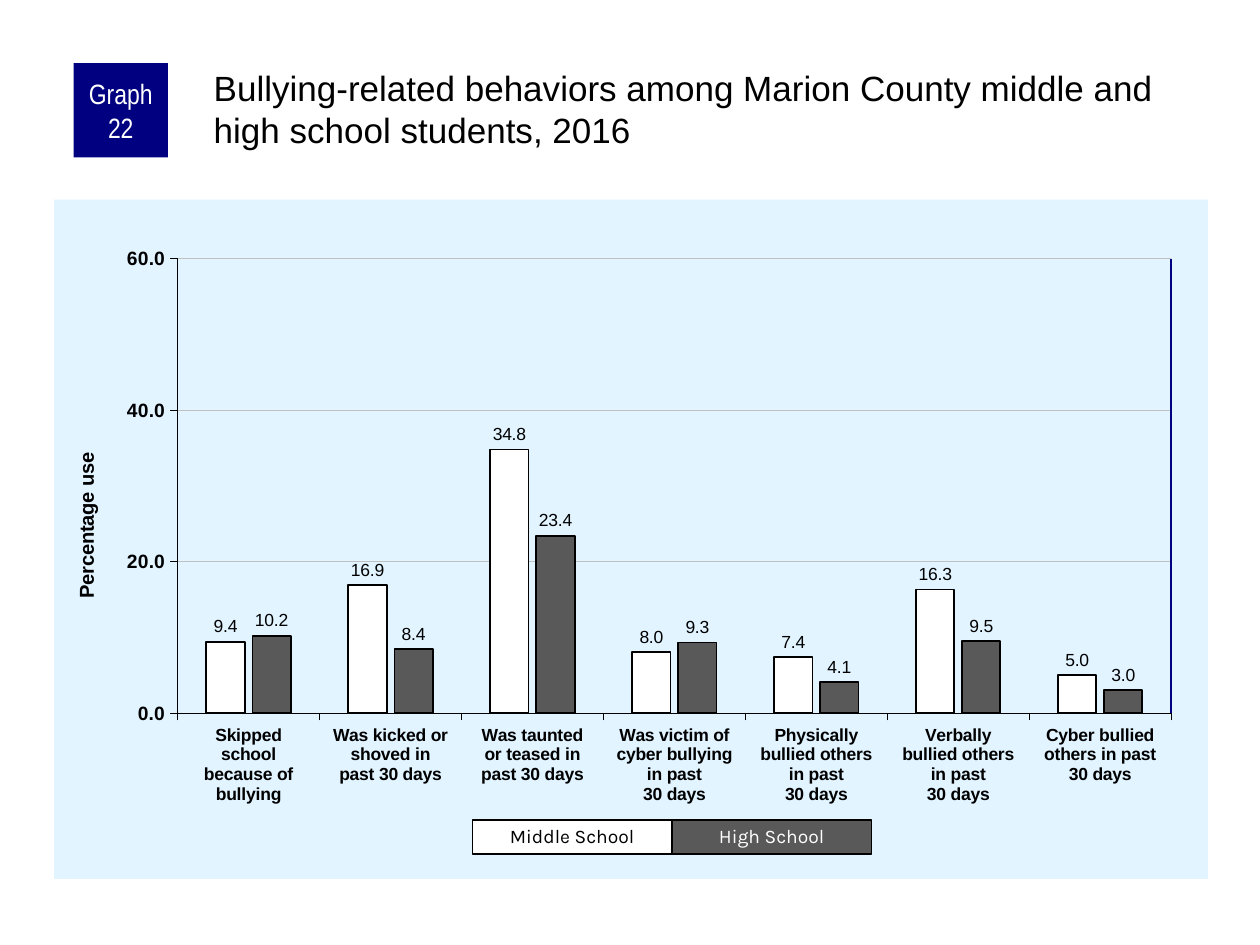
from dataclasses import dataclass

from lxml import etree
from pptx import Presentation
from pptx import util as u
from pptx.chart import data as chart_data
from pptx.dml.color import RGBColor
from pptx.enum import chart as charts, shapes, text
from pptx.oxml import parse_xml
from pptx.oxml import ns

COLUMNS, ROWS = 120, 90
PAGE_WIDTH, PAGE_HEIGHT = u.Inches(10), u.Inches(7.5)


@dataclass(frozen=True)
class Theme:
    black: str = "000000"
    white: str = "FFFFFF"
    navy: str = "000080"
    gray: str = "595959"
    grid: str = "C0C0C0"
    panel: str = "E1F4FF"
    body: str = "Arial"
    narrow: str = "Arial Narrow"
    legend: str = "Karla"
    title_size: float = 20
    badge_size: float = 16
    axis_title_size: float = 11.5
    axis_size: float = 11
    label_size: float = 10


@dataclass(frozen=True)
class Box:
    column: float
    row: float
    columns: float
    rows: float

    def emu(self):
        across, down = PAGE_WIDTH / COLUMNS, PAGE_HEIGHT / ROWS
        return [round(value) for value in (self.column * across, self.row * down,
                                           self.columns * across, self.rows * down)]

    def split(self, count):
        width = self.columns / count
        return [Box(self.column + index * width, self.row, width, self.rows)
                for index in range(count)]


THEME = Theme()
PLOT = {"x": 0.107, "y": 0.087, "w": 0.861, "h": 0.669}
SERIES = [
    ("Middle School", THEME.white, THEME.black, (9.4, 16.9, 34.8, 8, 7.4, 16.3, 5)),
    ("High School", THEME.gray, THEME.white, (10.2, 8.4, 23.4, 9.3, 4.1, 9.5, 3)),
]
CATEGORIES = [
    "Skipped\nschool\nbecause of\nbullying",
    "Was kicked or\nshoved in\npast 30 days",
    "Was taunted\nor teased in\npast 30 days",
    "Was victim of\ncyber bullying\nin past\n30 days",
    "Physically\nbullied others\nin past\n30 days",
    "Verbally\nbullied others\nin past\n30 days",
    "Cyber bullied\nothers in past\n30 days",
]


def set_font(font, size, color=THEME.black, name=THEME.body, bold=False):
    font.size, font.name, font.bold = u.Pt(size), name, bold
    font.color.rgb = RGBColor.from_string(color)


def set_line(line, color, width):
    line.color.rgb = RGBColor.from_string(color)
    line.width = u.Pt(width)


def set_fill(fill, color):
    fill.solid()
    fill.fore_color.rgb = RGBColor.from_string(color)


def write(frame, words, *, size, color=THEME.black, name=THEME.body, align=None,
          anchor=text.MSO_ANCHOR.TOP, insets=(0.1, 0.05, 0.1, 0.05), spacing=None):
    frame.word_wrap = True
    frame.vertical_anchor = anchor
    (frame.margin_left, frame.margin_top,
     frame.margin_right, frame.margin_bottom) = map(u.Inches, insets)
    para = frame.paragraphs[0]
    para.alignment, para.line_spacing = align, spacing
    span = para.add_run()
    span.text = words
    set_font(span.font, size, color, name)


def add_block(page, box, fill, outline=None):
    block = page.shapes.add_shape(shapes.MSO_SHAPE.RECTANGLE, *box.emu())
    block.shadow.inherit = False
    set_fill(block.fill, fill)
    if outline:
        set_line(block.line, outline, 0.75)
    else:
        block.line.fill.background()
    return block


def add_heading(page, badge_box, title_box):
    badge = add_block(page, badge_box, THEME.navy)
    write(badge.text_frame, "Graph 22", size=THEME.badge_size, color=THEME.white,
          name=THEME.narrow, align=text.PP_ALIGN.CENTER,
          anchor=text.MSO_ANCHOR.MIDDLE, insets=(0.05, 0, 0.05, 0))
    title = page.shapes.add_textbox(*title_box.emu())
    write(title.text_frame,
          "Bullying-related behaviors among Marion County middle and high school students, 2016",
          size=THEME.title_size, insets=(0.03, 0.03, 0, 0))


def set_chart_area(chart):
    area = parse_xml(
        f'<c:spPr {ns.nsdecls("c", "a")}><a:solidFill><a:srgbClr val="{THEME.panel}"/>'
        '</a:solidFill><a:ln><a:noFill/></a:ln></c:spPr>')
    chart.element.find(ns.qn("c:chart")).addnext(area)
    plot_area = chart.element.find(".//" + ns.qn("c:plotArea"))
    for old in plot_area.findall(ns.qn("c:layout")):
        plot_area.remove(old)
    layout = etree.Element(ns.qn("c:layout"))
    manual = etree.SubElement(layout, ns.qn("c:manualLayout"))
    settings = {"layoutTarget": "inner", "xMode": "edge", "yMode": "edge", **PLOT}
    for key, value in settings.items():
        etree.SubElement(manual, ns.qn("c:" + key)).set("val", str(value))
    plot_area.insert(0, layout)


def style_axes(chart):
    for axis, size in ((chart.category_axis, THEME.label_size),
                       (chart.value_axis, THEME.axis_size)):
        axis.major_tick_mark = charts.XL_TICK_MARK.OUTSIDE
        axis.minor_tick_mark = charts.XL_TICK_MARK.NONE
        set_font(axis.tick_labels.font, size, bold=True)
        set_line(axis.format.line, THEME.black, 0.25)
    axis = chart.value_axis
    axis.minimum_scale, axis.maximum_scale, axis.major_unit = 0, 60, 20
    axis.tick_labels.number_format = "0.0"
    axis.tick_labels.number_format_is_linked = False
    set_line(axis.major_gridlines.format.line, THEME.grid, 0.25)
    span = axis.axis_title.text_frame.paragraphs[0].add_run()
    span.text = "Percentage use"
    set_font(span.font, THEME.axis_title_size, bold=True)


def style_bars(plot):
    plot.gap_width, plot.overlap, plot.vary_by_categories = 150, -20, False
    for series, (_, fill, _, _) in zip(plot.series, SERIES):
        set_fill(series.format.fill, fill)
        set_line(series.format.line, THEME.black, 1)
        series.invert_if_negative = False
        labels = series.data_labels
        labels.show_value = True
        labels.number_format, labels.number_format_is_linked = "0.0", False
        labels.position = charts.XL_LABEL_POSITION.OUTSIDE_END
        set_font(labels.font, THEME.label_size)


def add_graph(page, box):
    numbers = chart_data.CategoryChartData(number_format="0.0")
    numbers.categories = CATEGORIES
    for name, _, _, values in SERIES:
        numbers.add_series(name, values)
    chart = page.shapes.add_chart(charts.XL_CHART_TYPE.COLUMN_CLUSTERED,
                                  *box.emu(), numbers).chart
    chart.has_legend = chart.has_title = False
    set_font(chart.font, THEME.axis_title_size)
    set_chart_area(chart)
    style_axes(chart)
    style_bars(chart.plots[0])

    left, top, width, height = box.emu()
    right = round(left + (PLOT["x"] + PLOT["w"]) * width)
    upper = round(top + PLOT["y"] * height)
    lower = round(upper + PLOT["h"] * height)
    edge = page.shapes.add_connector(shapes.MSO_CONNECTOR.STRAIGHT,
                                     right, upper, right, lower)
    set_line(edge.line, THEME.navy, 1)
    etree.SubElement(edge.element.spPr, ns.qn("a:effectLst"))


def add_legend(page, box):
    for cell, (name, fill, color, _) in zip(box.split(len(SERIES)), SERIES):
        block = add_block(page, cell, fill, THEME.black)
        write(block.text_frame, name, size=THEME.axis_size, color=color,
              name=THEME.legend, align=text.PP_ALIGN.CENTER,
              anchor=text.MSO_ANCHOR.MIDDLE, spacing=0.9)
        block.text_frame.auto_size = text.MSO_AUTO_SIZE.SHAPE_TO_FIT_TEXT


def main():
    deck = Presentation()
    deck.slide_width, deck.slide_height = PAGE_WIDTH, PAGE_HEIGHT
    page = deck.slides.add_slide(deck.slide_layouts[6])
    add_graph(page, Box(5.16, 19, 109.9, 64.7))
    add_heading(page, Box(7, 6, 9, 9), Box(20, 6, 95, 10))
    add_legend(page, Box(45, 78.1, 38, 3.24))
    deck.save("out.pptx")


if __name__ == "__main__":
    main()
